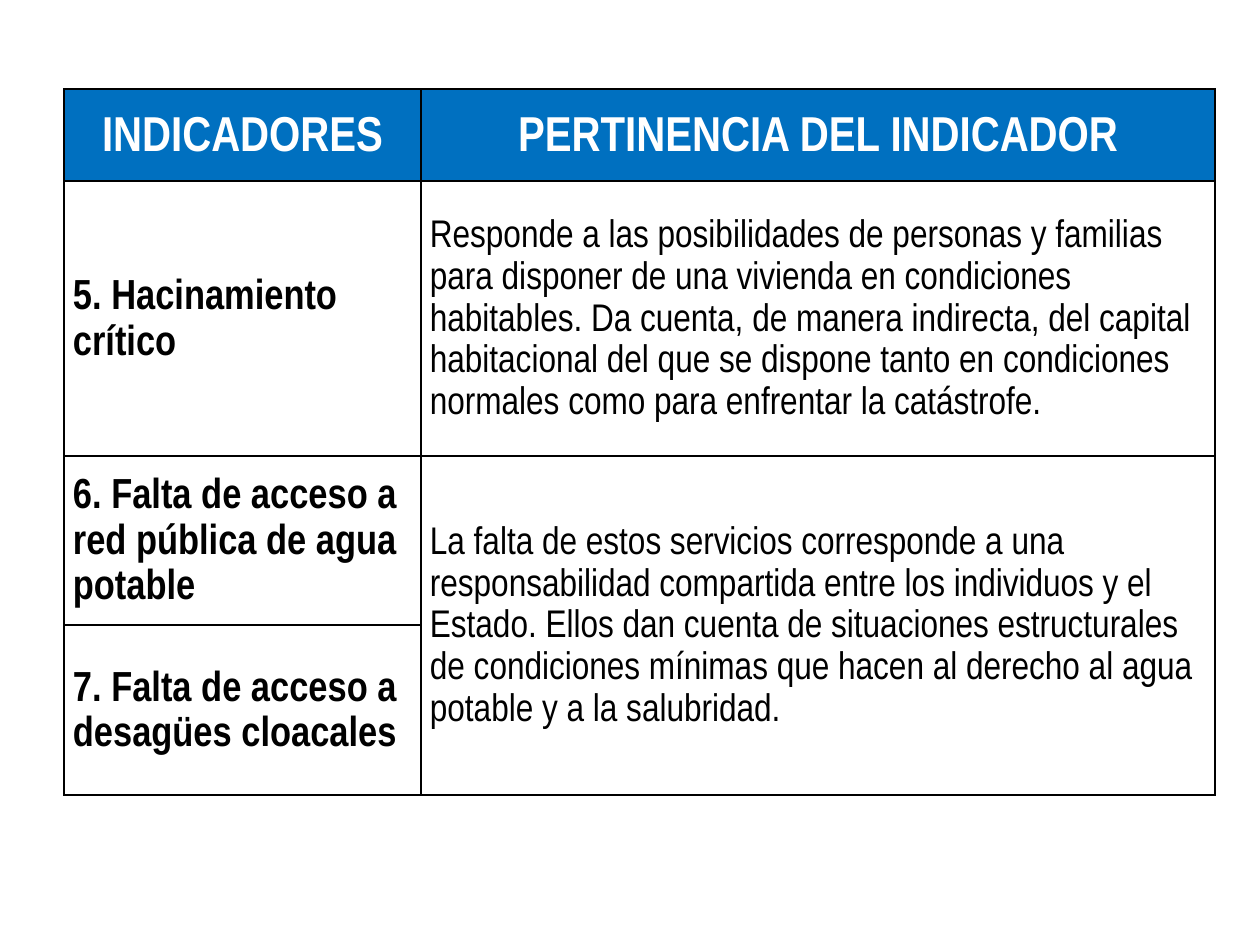
from dataclasses import dataclass

from lxml import etree
from pptx import Presentation
from pptx import util as u
from pptx.dml.color import RGBColor
from pptx.enum import text
from pptx.oxml import ns

PX_PER_INCH = 126
COLORS = {"header": "0070C0", "header_text": "FFFFFF", "body_text": "000000", "border": "000000"}
FONT = "Arial Narrow"
TABLE_LEFT, TABLE_TOP = 64, 89
COLUMN_WIDTHS = (357, 794)
ROW_HEIGHTS = (92, 275, 169, 170)
TAB_STOP = 410


@dataclass(frozen=True)
class CellStyle:
    size: int
    bold: bool
    color: str
    inset: int
    fill: str | None = None
    centered: bool = False


HEADER = CellStyle(28, True, "header_text", 6, fill="header", centered=True)
INDICATOR = CellStyle(24, True, "body_text", 9)
RELEVANCE = CellStyle(22, False, "body_text", 9)

ROWS = (
    ("INDICADORES", "PERTINENCIA DEL INDICADOR"),
    (
        "5. Hacinamiento crítico",
        "Responde a las posibilidades de personas y familias para disponer de una vivienda "
        "en condiciones habitables. Da cuenta, de manera indirecta, del capital habitacional "
        "del que se dispone tanto en condiciones normales como para enfrentar la catástrofe.",
    ),
    (
        "6. Falta de acceso a red pública de agua potable",
        "La falta de estos servicios corresponde a una responsabilidad compartida entre los "
        "individuos y el Estado. Ellos dan cuenta de situaciones estructurales de condiciones "
        "mínimas que hacen al derecho al agua potable y a la salubridad.",
    ),
    ("7. Falta de acceso a desagües cloacales", None),
)


def px(length: int) -> u.Emu:
    return u.Emu(round(length * 914400 / PX_PER_INCH))


def rgb(name: str) -> RGBColor:
    return RGBColor.from_string(COLORS[name])


def add_borders(cell) -> None:
    properties = cell._tc.get_or_add_tcPr()
    for side in ("lnL", "lnR", "lnT", "lnB"):
        line = etree.SubElement(properties, ns.qn(f"a:{side}"), w=str(u.Pt(1)))
        solid = etree.SubElement(line, ns.qn("a:solidFill"))
        etree.SubElement(solid, ns.qn("a:srgbClr"), val=COLORS["border"])


def add_tab_stop(paragraph) -> None:
    tabs = etree.SubElement(paragraph._p.get_or_add_pPr(), ns.qn("a:tabLst"))
    etree.SubElement(tabs, ns.qn("a:tab"), pos=str(px(TAB_STOP)), algn="l")


def format_cell(cell, style: CellStyle) -> None:
    add_borders(cell)
    if style.fill:
        cell.fill.solid()
        cell.fill.fore_color.rgb = rgb(style.fill)
    else:
        cell.fill.background()
    cell.vertical_anchor = text.MSO_ANCHOR.MIDDLE
    cell.margin_left = cell.margin_right = px(style.inset)
    cell.margin_top = cell.margin_bottom = 0


def write_cell(cell, wording: str, style: CellStyle) -> None:
    cell.text_frame.text = wording
    paragraph = cell.text_frame.paragraphs[0]
    if style.centered:
        paragraph.alignment = text.PP_ALIGN.CENTER
    else:
        add_tab_stop(paragraph)
        paragraph.alignment = text.PP_ALIGN.LEFT
    paragraph.line_spacing = 1.15
    paragraph.space_after = u.Pt(10)
    for run in paragraph.runs:
        run.font.name = FONT
        run.font.size = u.Pt(style.size)
        run.font.bold = style.bold
        run.font.color.rgb = rgb(style.color)


def add_indicator_table(slide) -> None:
    frame = slide.shapes.add_table(
        len(ROW_HEIGHTS), len(COLUMN_WIDTHS), px(TABLE_LEFT), px(TABLE_TOP),
        px(sum(COLUMN_WIDTHS)), px(sum(ROW_HEIGHTS)),
    )
    table = frame.table
    table.first_row = table.horz_banding = False
    for column, width in zip(table.columns, COLUMN_WIDTHS):
        column.width = px(width)
    for row, height in zip(table.rows, ROW_HEIGHTS):
        row.height = px(height)

    for r, wordings in enumerate(ROWS):
        styles = (HEADER, HEADER) if r == 0 else (INDICATOR, RELEVANCE)
        for c, (wording, style) in enumerate(zip(wordings, styles)):
            format_cell(table.cell(r, c), style)
            if wording:
                write_cell(table.cell(r, c), wording, style)

    # Indicators 6 and 7 share one explanation
    table.cell(2, 1).merge(table.cell(3, 1))


def main() -> None:
    presentation = Presentation()
    presentation.slide_width, presentation.slide_height = px(1260), px(945)
    slide = presentation.slides.add_slide(presentation.slide_layouts[6])
    add_indicator_table(slide)
    presentation.save("out.pptx")


if __name__ == "__main__":
    main()
